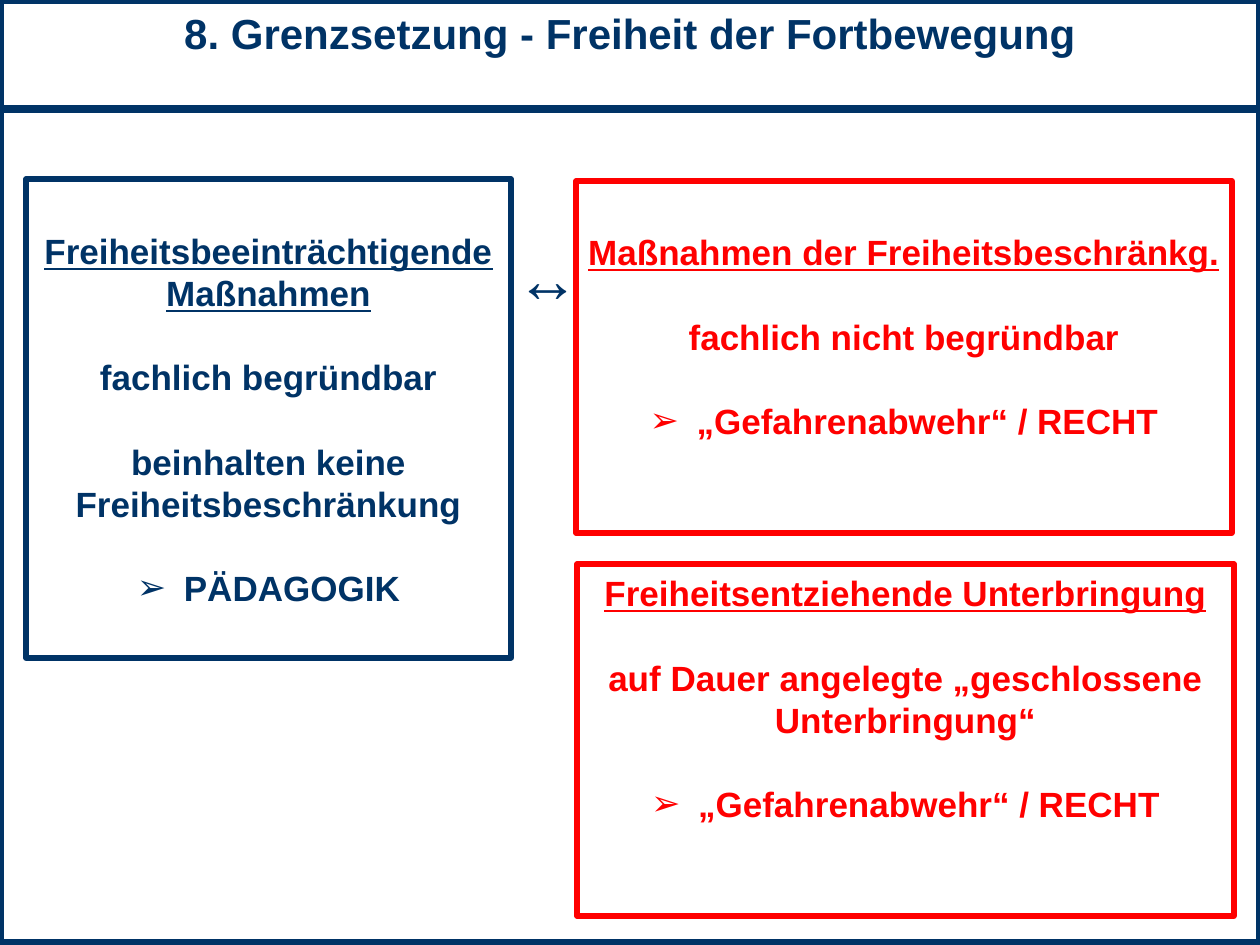
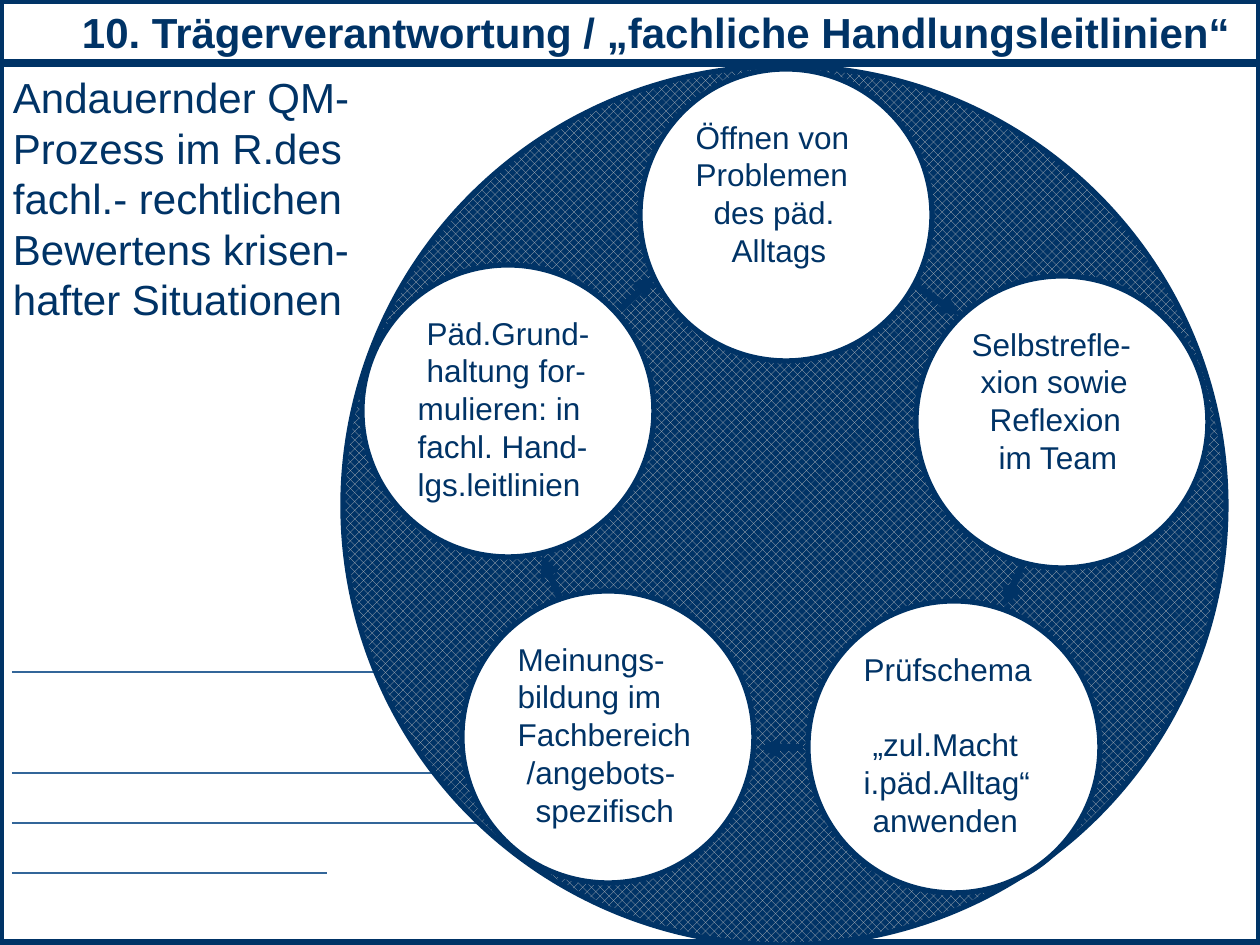
"""Build two slides on limits to freedom of movement and on provider responsibility."""
import dataclasses

import lxml.etree
import pptx
import pptx.dml.color
import pptx.enum.dml
import pptx.enum.shapes
import pptx.enum.text
import pptx.oxml.ns
import pptx.util

EMU_PER_PX = 914400 / 126
PAGE_WIDTH, PAGE_HEIGHT = 1260, 945
SHAPES = pptx.enum.shapes.MSO_SHAPE
ALIGN = pptx.enum.text.PP_ALIGN


@dataclasses.dataclass(frozen=True)
class Theme:
    """Colours, font, type sizes and line widths of the deck."""
    navy: str = "003366"
    steel: str = "336699"
    red: str = "FF0000"
    white: str = "FFFFFF"
    silver: str = "C0C0C0"
    font: str = "Arial"
    title_size: int = 24
    box_size: int = 20
    circle_size: int = 18
    symbol_size: int = 36
    leading: float = 1.2
    frame_line: int = 5
    shape_line: int = 3
    arrow_line: int = 4
    rule_line: float = 1.5


THEME = Theme()


def px(length):
    """Turn px into EMU."""
    return pptx.util.Emu(round(length * EMU_PER_PX))


def rgb(color):
    """Turn a hex string into a colour."""
    return pptx.dml.color.RGBColor.from_string(color)


def add_node(parent, tag, **attributes):
    """Append a DrawingML element."""
    return lxml.etree.SubElement(parent, pptx.oxml.ns.qn(tag), **attributes)


def add_outline(page, kind, bounds, line, width, fill=None):
    """Add an outlined preset shape, filled or hollow."""
    shape = page.shapes.add_shape(kind, *map(px, bounds))
    shape.shadow.inherit = False
    if fill:
        shape.fill.solid()
        shape.fill.fore_color.rgb = rgb(fill)
    else:
        shape.fill.background()
    shape.line.color.rgb = rgb(line)
    shape.line.width = pptx.util.Pt(width)
    return shape


def set_frame(shape, left=13, top=6, right=0):
    """Prepare a wrapping, top-anchored text frame."""
    frame = shape.text_frame
    frame.word_wrap = True
    frame.vertical_anchor = pptx.enum.text.MSO_ANCHOR.TOP
    frame.margin_left, frame.margin_top = px(left), px(top)
    frame.margin_right, frame.margin_bottom = px(right), 0
    return frame


def add_para(frame, text, *, size, color=THEME.navy, bold=False, underline=False,
             align=ALIGN.LEFT, gap=0, indent=0, bullet=None):
    """Write one paragraph; gap counts the lines left free above it."""
    para = frame.paragraphs[0]
    if para.runs:
        para = frame.add_paragraph()
    para.alignment = align
    para.line_spacing = pptx.util.Pt(size * THEME.leading)
    para.space_before = pptx.util.Pt(gap * size * THEME.leading)
    properties = para._p.get_or_add_pPr()
    properties.set("marL", str(px(indent)))
    if bullet:
        properties.set("indent", str(-px(indent)))
        add_node(properties, "a:buFont", typeface=THEME.font)
        add_node(properties, "a:buChar", char=bullet)
    span = para.add_run()
    span.text = text
    span.font.name = THEME.font
    span.font.size = pptx.util.Pt(size)
    span.font.color.rgb = rgb(color)
    span.font.bold = bold
    span.font.underline = underline


def add_line(page, start, end, color, width, arrow=False):
    """Draw a straight line, with an arrowhead at its end if asked."""
    line = page.shapes.add_connector(
        pptx.enum.shapes.MSO_CONNECTOR.STRAIGHT, *map(px, (*start, *end)))
    line.line.color.rgb = rgb(color)
    line.line.width = pptx.util.Pt(width)
    if arrow:
        add_node(line.line._get_or_add_ln(), "a:tailEnd", type="triangle")
    add_node(line._element.spPr, "a:effectLst")


def add_page(deck):
    """Add a blank page with the navy frame."""
    page = deck.slides.add_slide(deck.slide_layouts[6])
    add_outline(page, SHAPES.RECTANGLE, (0, 0, PAGE_WIDTH, 943),
                THEME.navy, THEME.frame_line)
    return page


def add_title(page, text, height, left=0, align=ALIGN.CENTER):
    """Add the title band across the top."""
    band = add_outline(page, SHAPES.RECTANGLE, (0, 0, PAGE_WIDTH, height),
                       THEME.navy, THEME.frame_line, THEME.white)
    add_para(set_frame(band, left=left, top=7), text,
             size=THEME.title_size, bold=True, align=align)


def add_measure_box(page, bounds, color, text_top, heading, statements, conclusion):
    """Add a box with underlined heading, statements and a bulleted conclusion."""
    box = add_outline(page, SHAPES.RECTANGLE, bounds, color, THEME.shape_line)
    frame = set_frame(box, left=8, top=text_top, right=8)
    style = dict(size=THEME.box_size, color=color, bold=True, align=ALIGN.CENTER)
    add_para(frame, heading, underline=True, **style)
    for statement in statements:
        add_para(frame, statement, gap=1, **style)
    add_para(frame, conclusion, gap=1, indent=47, bullet="➢", **style)


def add_step_circle(page, left, top, lines):
    """Add a white circle whose lines are (indent steps, text, free lines above)."""
    circle = add_outline(page, SHAPES.OVAL, (left, top, 292, 292),
                         THEME.navy, THEME.shape_line, THEME.white)
    frame = set_frame(circle)
    for steps, text, gap in lines:
        add_para(frame, text, size=THEME.circle_size, indent=9 * steps, gap=gap)


def build_freedom_page(deck):
    """Contrast pedagogical measures with averting danger."""
    page = add_page(deck)
    symbol = page.shapes.add_textbox(*map(px, (508, 239, 80, 80)))
    add_para(set_frame(symbol, left=0, top=0), "↔", size=THEME.symbol_size,
             bold=True, align=ALIGN.CENTER)
    add_measure_box(page, (26, 179, 485, 479), THEME.navy, 51,
                    "Freiheitsbeeinträchtigende Maßnahmen",
                    ["fachlich begründbar", "beinhalten keine Freiheitsbeschränkung"],
                    "PÄDAGOGIK")
    defence = "„Gefahrenabwehr“ / RECHT"
    add_measure_box(page, (576, 181, 656, 352), THEME.red, 50,
                    "Maßnahmen der Freiheitsbeschränkg.",
                    ["fachlich nicht begründbar"], defence)
    add_measure_box(page, (577, 564, 657, 352), THEME.red, 8,
                    "Freiheitsentziehende Unterbringung",
                    ["auf Dauer angelegte „geschlossene Unterbringung“"], defence)
    add_title(page, "8. Grenzsetzung - Freiheit der Fortbewegung", 109)


def build_process_page(deck):
    """Show the continuous quality process as a ring of five steps."""
    page = add_page(deck)
    intro = page.shapes.add_textbox(*map(px, (0, 66, 392, 267)))
    frame = set_frame(intro)
    for text in ("Andauernder QM-", "Prozess im R.des", "fachl.- rechtlichen",
                 "Bewertens krisen-", "hafter Situationen"):
        add_para(frame, text, size=THEME.title_size)
    for right, y in ((500, 672), (500, 773), (500, 823), (327, 873)):
        add_line(page, (12, y), (right, y), THEME.steel, THEME.rule_line)

    ring = add_outline(page, SHAPES.OVAL, (343, 66, 883, 879),
                       THEME.navy, THEME.shape_line)
    ring.fill.patterned()
    ring.fill.pattern = pptx.enum.dml.MSO_PATTERN.PERCENT_50
    ring.fill.fore_color.rgb = rgb(THEME.silver)
    ring.fill.back_color.rgb = rgb(THEME.navy)

    steps = (
        (640, 69, [(0, "Öffnen von", 0), (0, "Problemen", 0),
                   (2, "des päd.", 0), (4, "Alltags", 0)]),
        (916, 276, [(0, "Selbstrefle-", 0), (1, "xion sowie", 0),
                    (2, "Reflexion", 0), (3, "im Team", 0)]),
        (808, 601, [(0, "Prüfschema", 0), (1, "„zul.Macht", 1),
                    (0, "i.päd.Alltag“", 0), (1, "anwenden", 0)]),
        (462, 591, [(0, "Meinungs-", 0), (0, "bildung im", 0), (0, "Fachbereich", 0),
                    (1, "/angebots-", 0), (2, "spezifisch", 0)]),
        (362, 265, [(1, "Päd.Grund-", 0), (1, "haltung for-", 0), (0, "mulieren: in", 0),
                    (0, "fachl. Hand-", 0), (0, "lgs.leitlinien", 0)]),
    )
    for left, top, lines in steps:
        add_step_circle(page, left, top, lines)
    for start, end in (((916, 286), (960, 315)), ((1024, 561), (1004, 606)),
                       ((803, 748), (759, 748)), ((561, 601), (542, 556)),
                       ((620, 310), (655, 276))):
        add_line(page, start, end, THEME.navy, THEME.arrow_line, arrow=True)
    add_title(page, "10. Trägerverantwortung / „fachliche Handlungsleitlinien“", 63,
              left=82, align=ALIGN.LEFT)


def main():
    """Build and save the deck."""
    deck = pptx.Presentation()
    deck.slide_width, deck.slide_height = px(PAGE_WIDTH), px(PAGE_HEIGHT)
    build_freedom_page(deck)
    build_process_page(deck)
    deck.save("out.pptx")


if __name__ == "__main__":
    main()
